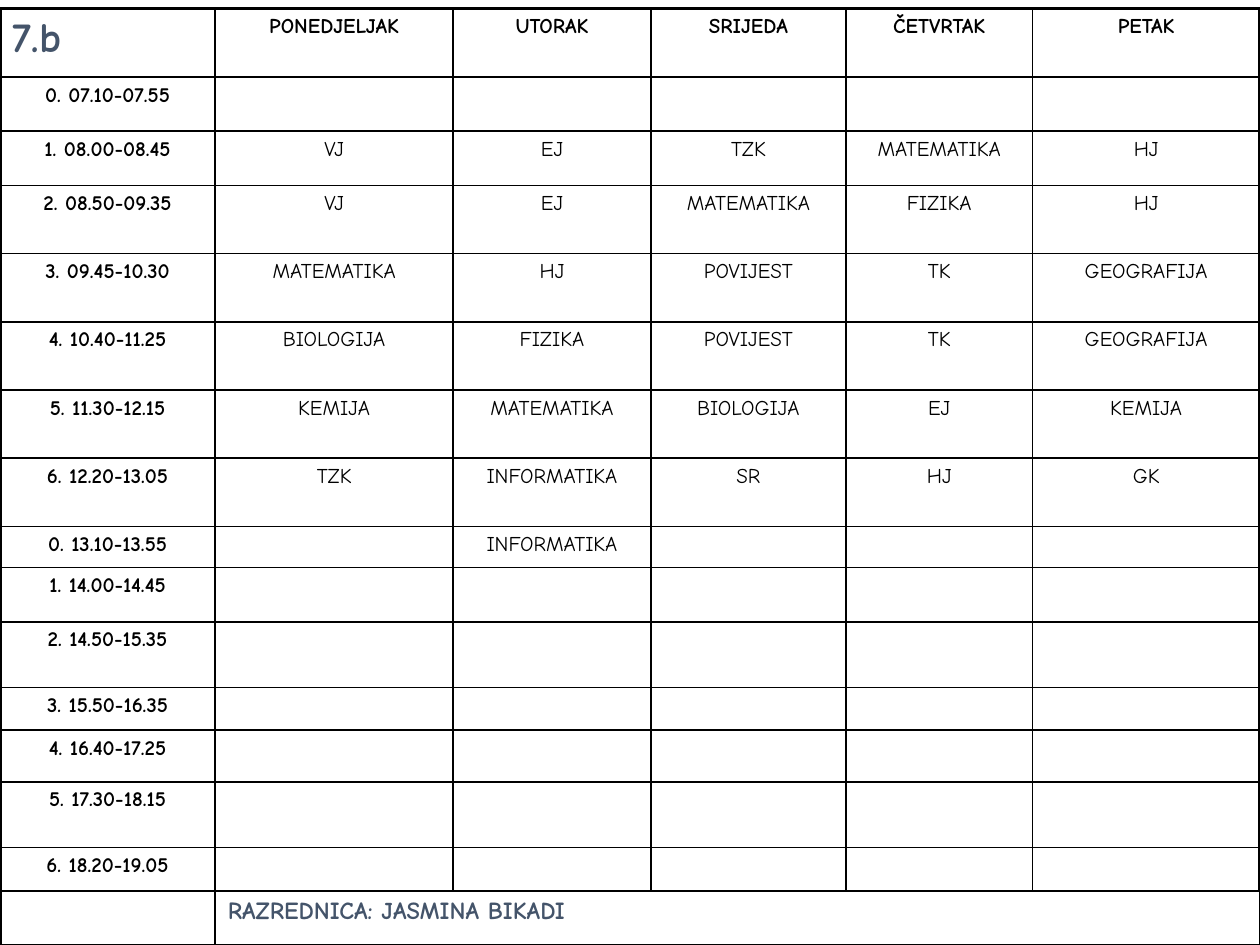
import pptx
import pptx.dml.color
import pptx.enum.text
import pptx.oxml
import pptx.oxml.ns
import pptx.util
from pptx.util import Pt

BLACK = pptx.dml.color.RGBColor(0x00, 0x00, 0x00)
SLATE = pptx.dml.color.RGBColor(0x44, 0x54, 0x6A)
FONT = "Comic Neue"
THIN, THICK = 1, 2.25

CLASS_NAME = "7.b"
TEACHER = "RAZREDNICA: JASMINA BIKADI"
DAYS = ["PONEDJELJAK", "UTORAK", "SRIJEDA", "ČETVRTAK", "PETAK"]
FREE = [""] * len(DAYS)
LESSONS = [
    ("0. 07.10-07.55", FREE),
    ("1. 08.00-08.45", ["VJ", "EJ", "TZK", "MATEMATIKA", "HJ"]),
    ("2. 08.50-09.35", ["VJ", "EJ", "MATEMATIKA", "FIZIKA", "HJ"]),
    ("3. 09.45-10.30", ["MATEMATIKA", "HJ", "POVIJEST", "TK", "GEOGRAFIJA"]),
    ("4. 10.40-11.25", ["BIOLOGIJA", "FIZIKA", "POVIJEST", "TK", "GEOGRAFIJA"]),
    ("5. 11.30-12.15", ["KEMIJA", "MATEMATIKA", "BIOLOGIJA", "EJ", "KEMIJA"]),
    ("6. 12.20-13.05", ["TZK", "INFORMATIKA", "SR", "HJ", "GK"]),
    ("0. 13.10-13.55", ["", "INFORMATIKA", "", "", ""]),
    ("1. 14.00-14.45", FREE),
    ("2. 14.50-15.35", FREE),
    ("3. 15.50-16.35", FREE),
    ("4. 16.40-17.25", FREE),
    ("5. 17.30-18.15", FREE),
    ("6. 18.20-19.05", FREE),
]
COLUMN_WIDTHS = [123, 136, 113, 111.5, 106.5, 130]
ROW_HEIGHTS = [39, 31, 31, 39, 39, 39, 39, 39, 23.5, 31, 37.5, 24.5, 29.5, 37.5, 25, 31]
TABLE_TOP = 5


def set_borders(cell, widths):
    properties = cell._tc.get_or_add_tcPr()
    for side, width in widths.items():
        properties.append(pptx.oxml.parse_xml(
            f'<a:ln{side} {pptx.oxml.ns.nsdecls("a")} w="{Pt(width)}">'
            f'<a:solidFill><a:srgbClr val="{BLACK}"/></a:solidFill></a:ln{side}>'))


def write_cell(cell, text, size=12, bold=False, color=BLACK, centered=True):
    cell.text_frame.text = text
    para = cell.text_frame.paragraphs[0]
    if centered:
        para.alignment = pptx.enum.text.PP_ALIGN.CENTER
    for span in para.runs:
        span.font.name = FONT
        span.font.size = Pt(size)
        span.font.bold = bold
        span.font.color.rgb = color
    if not text:
        para._p.append(pptx.oxml.parse_xml(
            f'<a:endParaRPr {pptx.oxml.ns.nsdecls("a")} sz="{size * 100}"/>'))


def build_timetable(page):
    rows = [[CLASS_NAME] + DAYS]
    rows += [[time] + subjects for time, subjects in LESSONS]
    rows.append(["", TEACHER] + FREE[1:])
    last_row, last_column = len(rows) - 1, len(DAYS)

    frame = page.shapes.add_table(
        len(rows), len(COLUMN_WIDTHS), Pt(0), Pt(TABLE_TOP),
        Pt(sum(COLUMN_WIDTHS)), Pt(sum(ROW_HEIGHTS)))
    table = frame.table
    table.first_row = table.horz_banding = False
    for column, width in zip(table.columns, COLUMN_WIDTHS):
        column.width = Pt(width)
    for row, height in zip(table.rows, ROW_HEIGHTS):
        row.height = Pt(height)

    for i, texts in enumerate(rows):
        for j, text in enumerate(texts):
            cell = table.cell(i, j)
            set_borders(cell, {
                "L": THICK if j == 0 else THIN,
                "R": THICK if j == last_column else THIN,
                "T": THICK if i == 0 else THIN,
                "B": THICK if i == last_row else THIN,
            })
            cell.fill.background()
            write_cell(cell, text, bold=i == 0 or j == 0)

    write_cell(table.cell(0, 0), CLASS_NAME, 24, True, SLATE, False)
    footer = table.cell(last_row, 1)
    footer.merge(table.cell(last_row, last_column))
    write_cell(footer, TEACHER, 14, True, SLATE, False)
    for cell in (table.cell(0, 0), footer):
        cell.text_frame.paragraphs[0].alignment = pptx.enum.text.PP_ALIGN.LEFT


def main():
    deck = pptx.Presentation()
    deck.slide_width, deck.slide_height = Pt(720), Pt(540)
    page = deck.slides.add_slide(deck.slide_layouts[6])
    build_timetable(page)
    deck.save("out.pptx")


if __name__ == "__main__":
    main()
